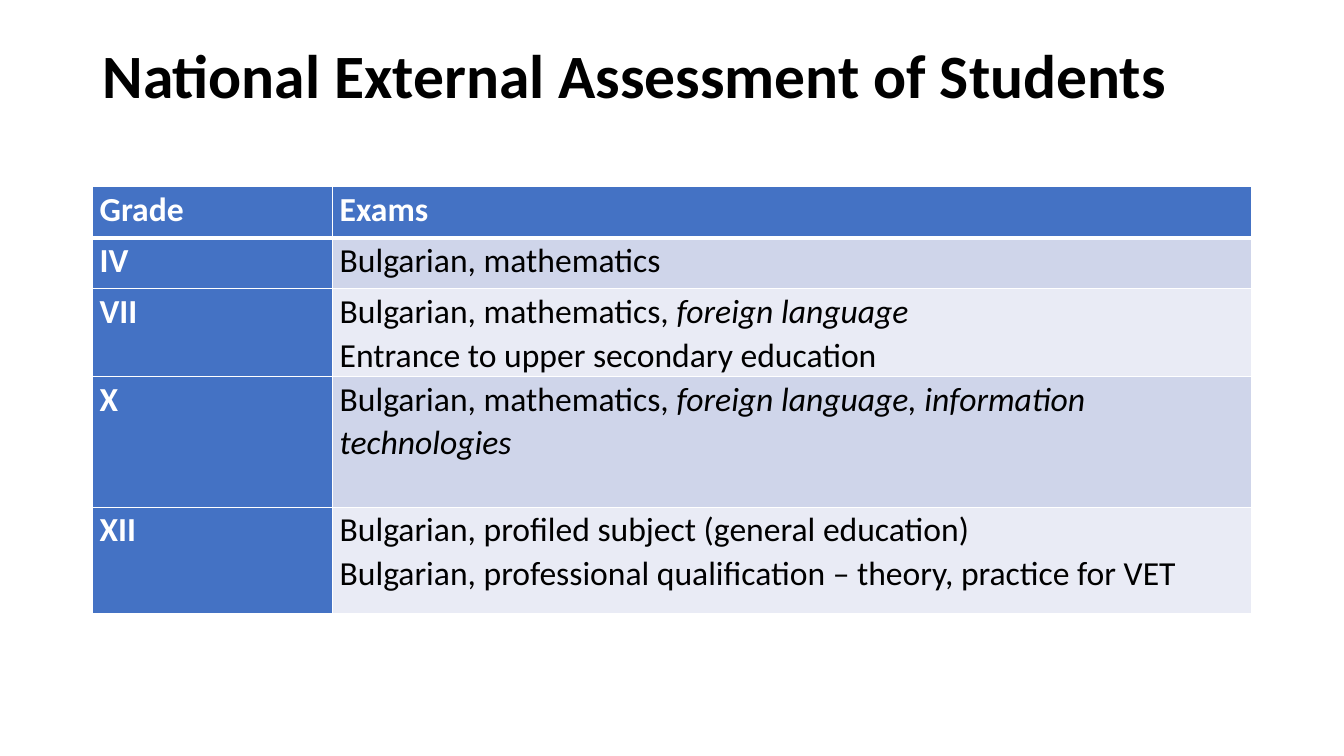
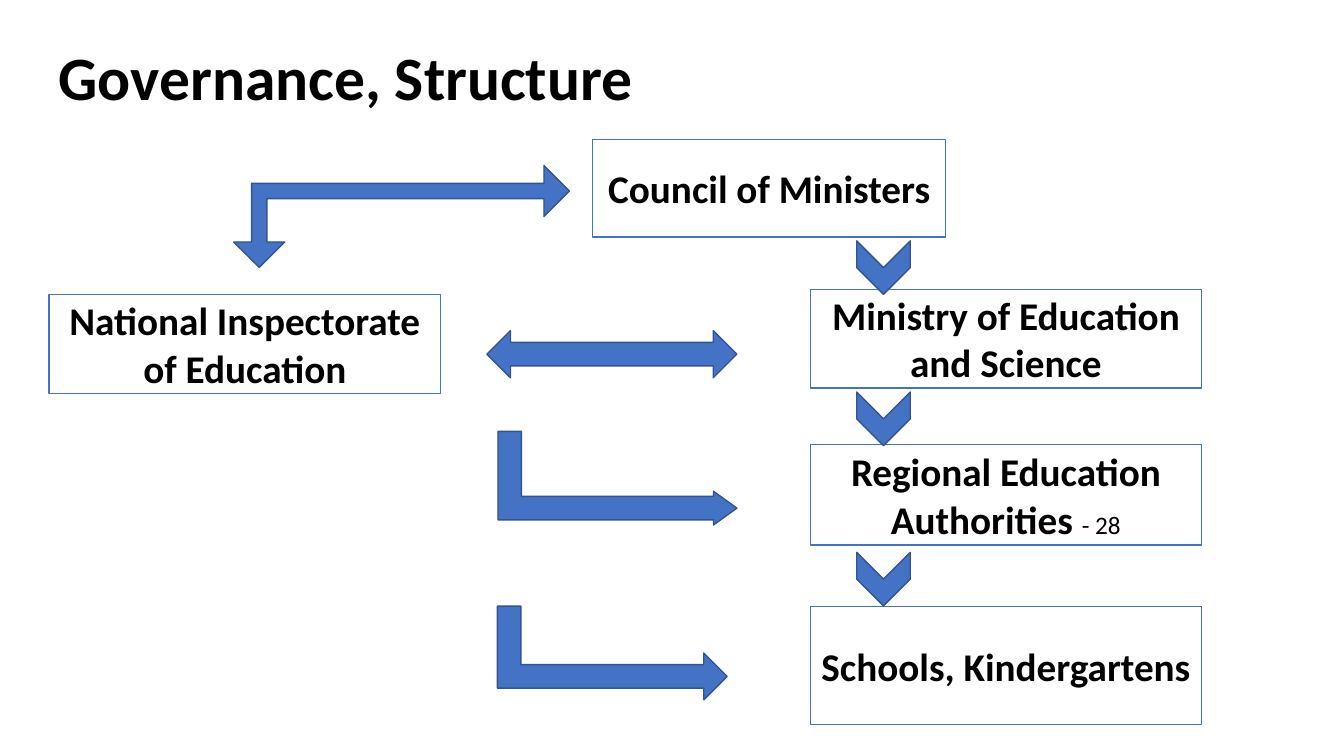
import pptx
import pptx.util
import pptx.dml.color
import pptx.enum.shapes
import pptx.enum.text
import pptx.oxml
import pptx.oxml.ns

Cm = pptx.util.Cm
Pt = pptx.util.Pt
RGBColor = pptx.dml.color.RGBColor
SHAPE = pptx.enum.shapes.MSO_SHAPE
ALIGN = pptx.enum.text.PP_ALIGN
ANCHOR = pptx.enum.text.MSO_ANCHOR

BLACK = RGBColor(0x00, 0x00, 0x00)
WHITE = RGBColor(0xFF, 0xFF, 0xFF)
BLUE = RGBColor(0x44, 0x72, 0xC4)
DARK_BLUE = RGBColor(0x32, 0x54, 0x91)
BAND_DARK = RGBColor(0xCF, 0xD5, 0xEA)
BAND_LIGHT = RGBColor(0xE9, 0xEB, 0xF5)
FONT = "Calibri"

deck = pptx.Presentation()
deck.slide_width = Cm(33.87)
deck.slide_height = Cm(19.05)


def add_run(para, text, size, color=BLACK, bold=False, italic=False):
    span = para.add_run()
    span.text = text
    span.font.name = FONT
    span.font.size = Pt(size)
    span.font.color.rgb = color
    span.font.bold = bold
    span.font.italic = italic


def add_shape(page, kind, place, fill, line):
    shape = page.shapes.add_shape(kind, *[Cm(length) for length in place])
    shape.shadow.inherit = False
    shape.fill.solid()
    shape.fill.fore_color.rgb = fill
    shape.line.color.rgb = line
    shape.line.width = Pt(1)
    return shape


titles = [
    ("National External Assessment of Students", (2.33, 1.02, 29.21, 3.68), ANCHOR.TOP),
    ("Governance, Structure", (1.22, 0.71, 30.33, 2.64), ANCHOR.MIDDLE),
]
pages = []
for text, place, anchor in titles:
    page = deck.slides.add_slide(deck.slide_layouts[5])
    title = page.shapes.title
    title.left, title.top, title.width, title.height = [Cm(length) for length in place]
    frame = title.text_frame
    frame.word_wrap = True
    frame.auto_size = pptx.enum.text.MSO_AUTO_SIZE.NONE
    frame.vertical_anchor = anchor
    para = frame.paragraphs[0]
    para.alignment = ALIGN.LEFT
    para.line_spacing = 0.9
    add_run(para, text, 44, bold=True)
    pages.append(page)
assessment_page, governance_page = pages

exams = [
    ("Grade", [[("Exams", False)]], 1.3),
    ("IV", [[("Bulgarian, mathematics", False)]], 1.27),
    ("VII", [[("Bulgarian, mathematics, ", False), ("foreign language", True)],
             [("Entrance to upper secondary education", False)]], 2.21),
    ("X", [[("Bulgarian, mathematics, ", False),
            ("foreign language, information technologies", True)]], 3.3),
    ("XII", [[("Bulgarian, profiled subject (general education)", False)],
             [("Bulgarian, professional qualification – theory, practice for VET", False)]], 2.69),
]
total_height = sum(height for grade, lines, height in exams)
table = assessment_page.shapes.add_table(
    len(exams), 2, Cm(2.33), Cm(4.7), Cm(29.21), Cm(total_height)).table
table.columns[0].width = Cm(6.05)
table.columns[1].width = Cm(23.16)

for row, (grade, lines, height) in enumerate(exams):
    table.rows[row].height = Cm(height)
    for column, paragraphs in enumerate([[[(grade, False)]], lines]):
        cell = table.cell(row, column)
        heading = row == 0 or column == 0
        cell.margin_left = cell.margin_right = Cm(0.18)
        cell.margin_top = cell.margin_bottom = 0
        properties = cell._tc.get_or_add_tcPr()
        for side in "LRTB":
            thick = (row, side) in [(0, "B"), (1, "T")]
            properties.append(pptx.oxml.parse_xml(
                f'<a:ln{side} {pptx.oxml.ns.nsdecls("a")} w="{Pt(3 if thick else 1)}">'
                f'<a:solidFill><a:srgbClr val="{WHITE}"/></a:solidFill></a:ln{side}>'))
        cell.fill.solid()
        cell.fill.fore_color.rgb = BLUE if heading else BAND_DARK if row % 2 else BAND_LIGHT
        for index, spans in enumerate(paragraphs):
            frame = cell.text_frame
            para = frame.add_paragraph() if index else frame.paragraphs[0]
            para.line_spacing = 1.07
            for text, italic in spans:
                add_run(para, text, 24, WHITE if heading else BLACK, heading, italic)

bodies = [
    ("Council of Ministers", "", (14.94, 3.51, 8.89, 2.46)),
    ("Ministry of Education and Science", "", (20.42, 7.29, 9.86, 2.49)),
    ("Regional Education Authorities ", "- 28", (20.42, 11.2, 9.86, 2.54)),
    ("Schools, Kindergartens", "", (20.42, 15.29, 9.86, 2.97)),
    ("National Inspectorate of Education", "", (1.24, 7.42, 9.86, 2.49)),
]
for name, count, place in bodies:
    box = add_shape(governance_page, SHAPE.RECTANGLE, place, WHITE, BLUE)
    box.text_frame.word_wrap = True
    box.text_frame.vertical_anchor = ANCHOR.MIDDLE
    para = box.text_frame.paragraphs[0]
    para.alignment = ALIGN.CENTER
    add_run(para, name, 28, bold=True)
    if count:
        add_run(para, count, 18)

arrows = [(SHAPE.CHEVRON, (21.59, top, 1.35, 1.35), 90, []) for top in (6.07, 9.88, 13.92)]
arrows += [
    (SHAPE.LEFT_RIGHT_ARROW, (12.27, 8.33, 6.3, 1.19), 0, []),
    (SHAPE.LEFT_UP_ARROW, (5.89, 4.17, 8.46, 2.57), 180, [0.15, 0.25, 0.25]),
    (SHAPE.BENT_UP_ARROW, (14.38, 9.04, 2.36, 6.02), 90, [0.25, 0.18, 0.25]),
    (SHAPE.BENT_UP_ARROW, (14.25, 13.56, 2.36, 5.79), 90, []),
]
for kind, place, rotation, adjustments in arrows:
    arrow = add_shape(governance_page, kind, place, BLUE, DARK_BLUE)
    arrow.rotation = rotation
    for index, value in enumerate(adjustments):
        arrow.adjustments[index] = value

deck.save("out.pptx")
